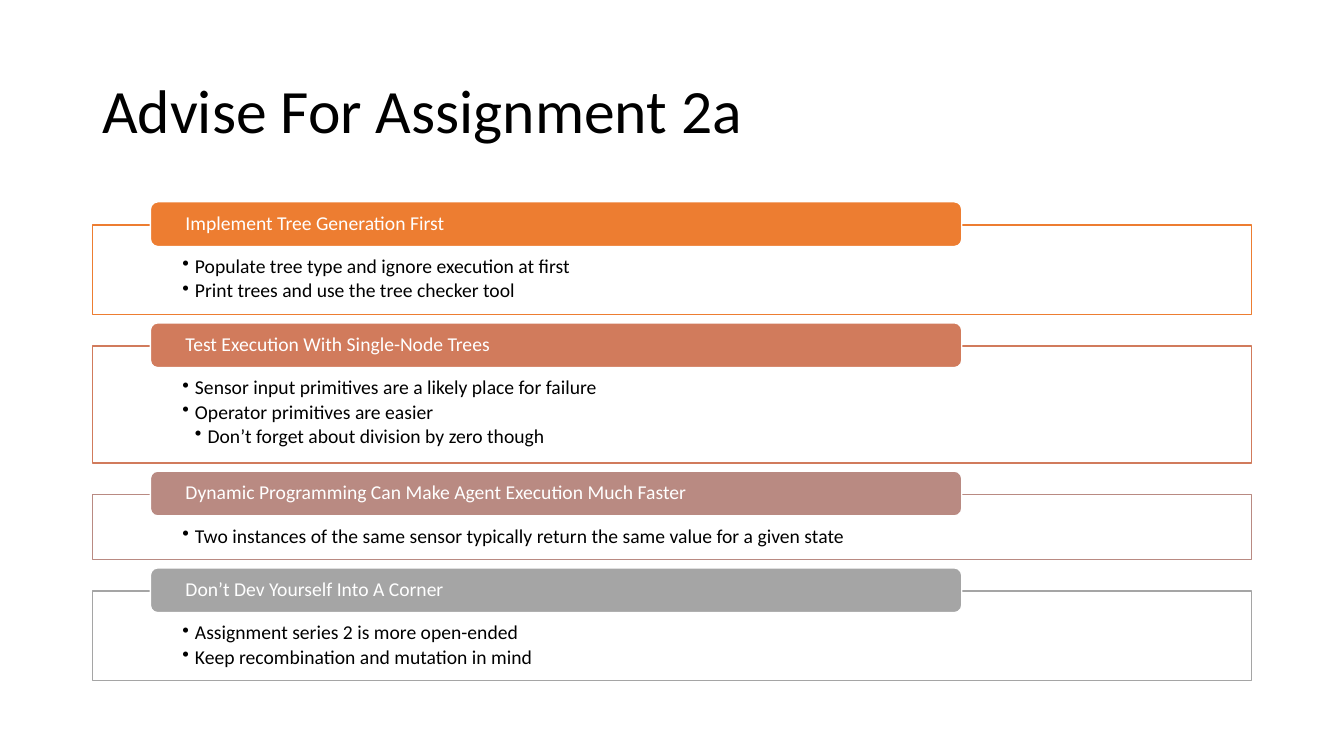
from lxml import etree
from pptx import Presentation
from pptx.dml.color import RGBColor
from pptx.enum.shapes import MSO_SHAPE
from pptx.enum.text import MSO_ANCHOR, PP_ALIGN
from pptx.oxml.ns import qn
from pptx.util import Pt

RECTANGLE = MSO_SHAPE.RECTANGLE
ROUNDED = MSO_SHAPE.ROUNDED_RECTANGLE
TOP = MSO_ANCHOR.TOP
MIDDLE = MSO_ANCHOR.MIDDLE
LEFT = PP_ALIGN.LEFT

FONT = "Calibri"
BLACK, WHITE = "000000", "FFFFFF"
BOX_LEFT, BOX_WIDTH, FIRST_TOP, BOX_GAP = 66, 828, 160.6, 22.3
TAB_LEFT, TAB_WIDTH, TAB_HEIGHT, TAB_RISE = 107.4, 579.6, 32, 16.5
BULLET_STEP = 9

TITLE_FORMAT = {"size": 44, "color": BLACK, "space_after": 0,
                "anchor": MIDDLE, "margins": (7.2, 3.6, 7.2, 3.6)}
BOX_FORMAT = {"size": 14, "color": BLACK, "space_after": 2.1,
              "anchor": TOP, "margins": (64.3, 22.9, 64.3, 7.8)}
TAB_FORMAT = {"size": 14, "color": WHITE, "space_after": 0,
              "anchor": MIDDLE, "margins": (23.5, 0, 23.5, 0)}

SECTIONS = [
    ("Implement Tree Generation First", "ED7D31", 64.2, [
        (1, "Populate tree type and ignore execution at first"),
        (1, "Print trees and use the tree checker tool")]),
    ("Test Execution With Single-Node Trees", "D17B5C", 83.6, [
        (1, "Sensor input primitives are a likely place for failure"),
        (1, "Operator primitives are easier"),
        (2, "Don’t forget about division by zero though")]),
    ("Dynamic Programming Can Make Agent Execution Much Faster", "B98A82", 46.8, [
        (1, "Two instances of the same sensor typically return the same value"
            " for a given state")]),
    ("Don’t Dev Yourself Into A Corner", "A5A5A5", 64.2, [
        (1, "Assignment series 2 is more open-ended"),
        (1, "Keep recombination and mutation in mind")]),
]


def rgb(value):
    """Return the colour for a hex string."""
    return RGBColor.from_string(value)


def set_attributes(target, values):
    """Set each named attribute of the target."""
    for name, value in values.items():
        setattr(target, name, value)


def add_bullet(paragraph, level):
    """Give a paragraph a hanging bullet at the given level."""
    properties = paragraph._p.get_or_add_pPr()
    properties.set("marL", str(Pt(BULLET_STEP * level)))
    properties.set("indent", str(-Pt(BULLET_STEP)))
    etree.SubElement(properties, qn("a:buChar")).set("char", "•")


def write_text(shape, lines, text_format):
    """Write (level, text) lines into a shape; level 0 has no bullet."""
    frame = shape.text_frame
    left, top, right, bottom = map(Pt, text_format["margins"])
    set_attributes(frame, {
        "word_wrap": True, "vertical_anchor": text_format["anchor"],
        "margin_left": left, "margin_top": top,
        "margin_right": right, "margin_bottom": bottom})
    for index, (level, text) in enumerate(lines):
        paragraph = frame.add_paragraph() if index else frame.paragraphs[0]
        set_attributes(paragraph, {
            "alignment": LEFT, "line_spacing": 0.9, "space_before": Pt(0),
            "space_after": Pt(text_format["space_after"])})
        if level:
            add_bullet(paragraph, level)
        run = paragraph.add_run()
        run.text = text
        set_attributes(run.font, {"name": FONT, "size": Pt(text_format["size"])})
        run.font.color.rgb = rgb(text_format["color"])


def add_panel(slide, kind, bounds, fill, line):
    """Add a filled and outlined shape without a shadow."""
    shape = slide.shapes.add_shape(kind, *map(Pt, bounds))
    shape.shadow.inherit = False
    shape.fill.solid()
    shape.fill.fore_color.rgb = rgb(fill)
    shape.line.color.rgb = rgb(line)
    shape.line.width = Pt(1)
    return shape


def set_opacity(shape, percent):
    """Set the opacity of a solid shape fill."""
    color = shape._element.spPr.find(qn("a:solidFill"))[0]
    etree.SubElement(color, qn("a:alpha")).set("val", str(percent * 1000))


def add_title(slide, text):
    """Add the slide title."""
    box = slide.shapes.add_textbox(Pt(66), Pt(28.8), Pt(828), Pt(104.4))
    write_text(box, [(0, text)], TITLE_FORMAT)


def add_section(slide, top, heading, color, height, lines):
    """Add an outlined list box with a coloured heading tab on its top edge."""
    box = add_panel(slide, RECTANGLE, (BOX_LEFT, top, BOX_WIDTH, height), WHITE, color)
    set_opacity(box, 90)
    write_text(box, lines, BOX_FORMAT)
    tab_bounds = (TAB_LEFT, top - TAB_RISE, TAB_WIDTH, TAB_HEIGHT)
    tab = add_panel(slide, ROUNDED, tab_bounds, color, WHITE)
    write_text(tab, [(0, heading)], TAB_FORMAT)


def main():
    """Build and save the slide."""
    presentation = Presentation()
    set_attributes(presentation, {"slide_width": Pt(960), "slide_height": Pt(540)})
    slide = presentation.slides.add_slide(presentation.slide_layouts[6])
    add_title(slide, "Advise For Assignment 2a")
    top = FIRST_TOP
    for heading, color, height, lines in SECTIONS:
        add_section(slide, top, heading, color, height, lines)
        top += height + BOX_GAP
    presentation.save("out.pptx")


if __name__ == "__main__":
    main()
